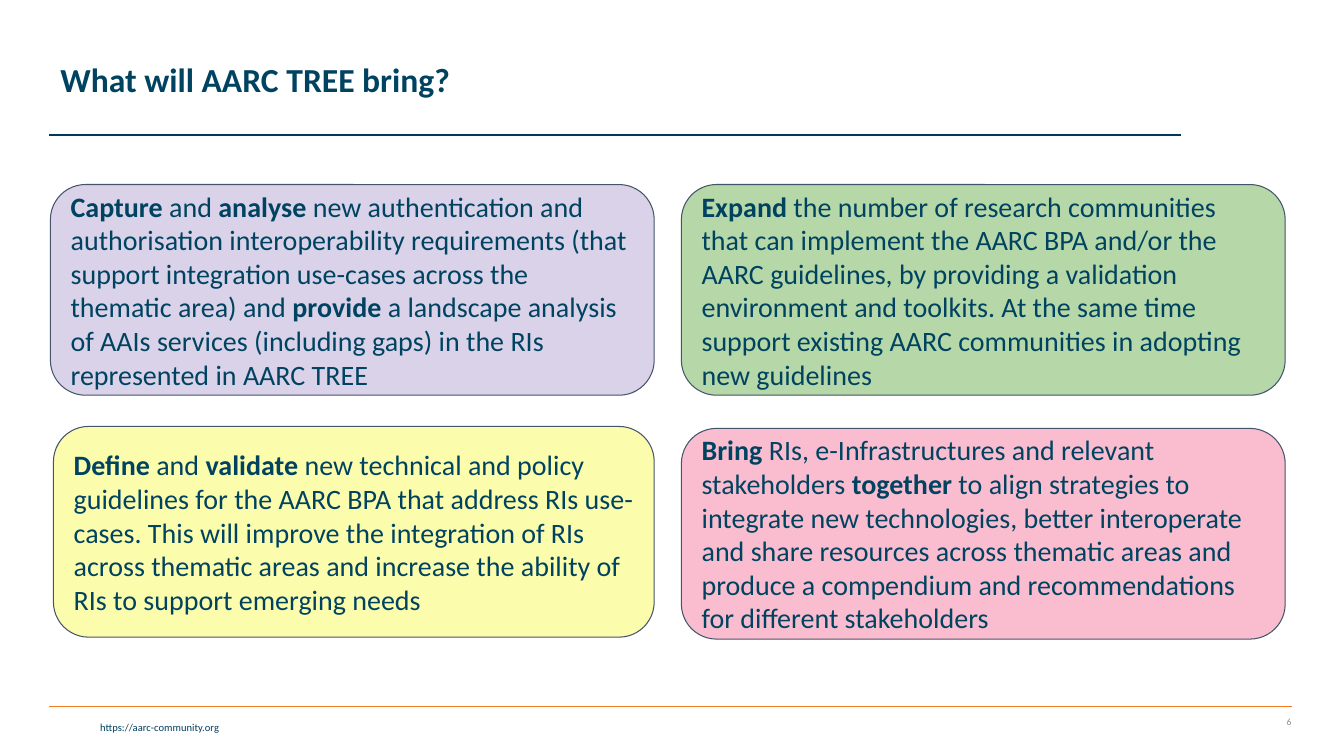
import pptx
import pptx.dml.color
import pptx.enum.shapes
import pptx.enum.text
import pptx.oxml.ns
import pptx.util
from lxml import etree

Pt = pptx.util.Pt
ALIGN = pptx.enum.text.PP_ALIGN
ANCHOR = pptx.enum.text.MSO_ANCHOR

COLORS = {
    "title": "004361", "body": "004360", "link": "003F5E", "number": "8C8C8C",
    "header_rule": "003959", "footer_rule": "F57B20", "outline": "44546A",
    "lilac": "D9D2E9", "yellow": "F6F600", "green": "B6D7A8", "pink": "ED1556",
}


class SlideBuilder:
    font = "Calibri"
    card_padding = 7.2

    def __init__(self, slide):
        self.slide = slide

    def color(self, name):
        return pptx.dml.color.RGBColor.from_string(COLORS[name])

    def add_run(self, paragraph, words, size, color, bold=False):
        run = paragraph.add_run()
        run.text = words
        run.font.name = self.font
        run.font.size = Pt(size)
        run.font.bold = bold
        run.font.color.rgb = self.color(color)

    def text(self, box, words, size, color, bold=False, align=ALIGN.LEFT,
             anchor=ANCHOR.TOP, spacing=1.0):
        frame = self.slide.shapes.add_textbox(*map(Pt, box)).text_frame
        frame.word_wrap = True
        frame.vertical_anchor = anchor
        paragraph = frame.paragraphs[0]
        paragraph.alignment = align
        paragraph.line_spacing = spacing
        self.add_run(paragraph, words, size, color, bold)

    def rule(self, left, right, y, color):
        line = self.slide.shapes.add_connector(
            pptx.enum.shapes.MSO_CONNECTOR.STRAIGHT, Pt(left), Pt(y), Pt(right), Pt(y))
        line.line.color.rgb = self.color(color)
        line.line.width = Pt(1)
        etree.SubElement(line._element.spPr, pptx.oxml.ns.qn("a:effectLst"))

    def card(self, box, fill, segments, opacity=100):
        """Rounded card whose text segments alternate bold and regular."""
        card = self.slide.shapes.add_shape(
            pptx.enum.shapes.MSO_SHAPE.ROUNDED_RECTANGLE, *map(Pt, box))
        card.shadow.inherit = False
        card.fill.solid()
        card.fill.fore_color.rgb = self.color(fill)
        if opacity < 100:
            tint = card._element.spPr.find(".//" + pptx.oxml.ns.qn("a:srgbClr"))
            etree.SubElement(tint, pptx.oxml.ns.qn("a:alpha"), val=str(opacity * 1000))
        card.line.color.rgb = self.color("outline")
        card.line.width = Pt(0.75)
        frame = card.text_frame
        frame.word_wrap = True
        frame.vertical_anchor = ANCHOR.MIDDLE
        frame.margin_left = frame.margin_right = Pt(self.card_padding)
        frame.margin_top = frame.margin_bottom = Pt(self.card_padding)
        paragraph = frame.paragraphs[0]
        paragraph.alignment = ALIGN.LEFT
        paragraph.space_after = Pt(10)
        for index, words in enumerate(segments):
            self.add_run(paragraph, words, 20, "body", bold=index % 2 == 0)


def main():
    deck = pptx.Presentation()
    deck.slide_width, deck.slide_height = Pt(960), Pt(540)
    builder = SlideBuilder(deck.slides.add_slide(deck.slide_layouts[6]))

    # Footer
    builder.rule(35.3, 923, 504.7, "footer_rule")
    builder.text((20.2, 511.2, 143.3, 16.6), "https://aarc-community.org", 7.5, "link",
                 align=ALIGN.RIGHT)
    builder.text((871.2, 504.7, 58.3, 21.6), "6", 6.8, "number",
                 align=ALIGN.RIGHT, anchor=ANCHOR.MIDDLE)

    # Title
    builder.rule(35.3, 843.8, 96.5, "header_rule")
    builder.text((36, 5.8, 756.7, 104.4), "What will AARC TREE bring?", 24, "title",
                 bold=True, anchor=ANCHOR.MIDDLE, spacing=0.9)

    # Four goals
    top, height, width, right_column = 131.8, 150.5, 431.3, 486.7
    builder.card((36, top, width, height), "lilac", [
        "Capture", " and ", "analyse",
        " new authentication and authorisation interoperability requirements (that support "
        "integration use-cases across the thematic area) and ",
        "provide",
        " a landscape analysis of AAIs services (including gaps) in the RIs represented in "
        "AARC TREE"])
    builder.card((38.2, 304.6, 429.1, height), "yellow", [
        "Define", " and ", "validate",
        " new technical and policy guidelines for the AARC BPA that address RIs use-cases. "
        "This will improve the integration of RIs across thematic areas and increase the "
        "ability of RIs to support emerging needs"], opacity=32)
    builder.card((right_column, top, width, height), "green", [
        "Expand",
        " the number of research communities that can implement the AARC BPA and/or the AARC "
        "guidelines, by providing a validation environment and toolkits. At the same time "
        "support existing AARC communities in adopting new guidelines"])
    builder.card((right_column, 306, width, height), "pink", [
        "Bring ", "RIs, e-Infrastructures and relevant stakeholders ", "together",
        " to align strategies to integrate new technologies, better interoperate and share "
        "resources across thematic areas and produce a compendium and recommendations for "
        "different stakeholders"], opacity=28)

    deck.save("out.pptx")


if __name__ == "__main__":
    main()
